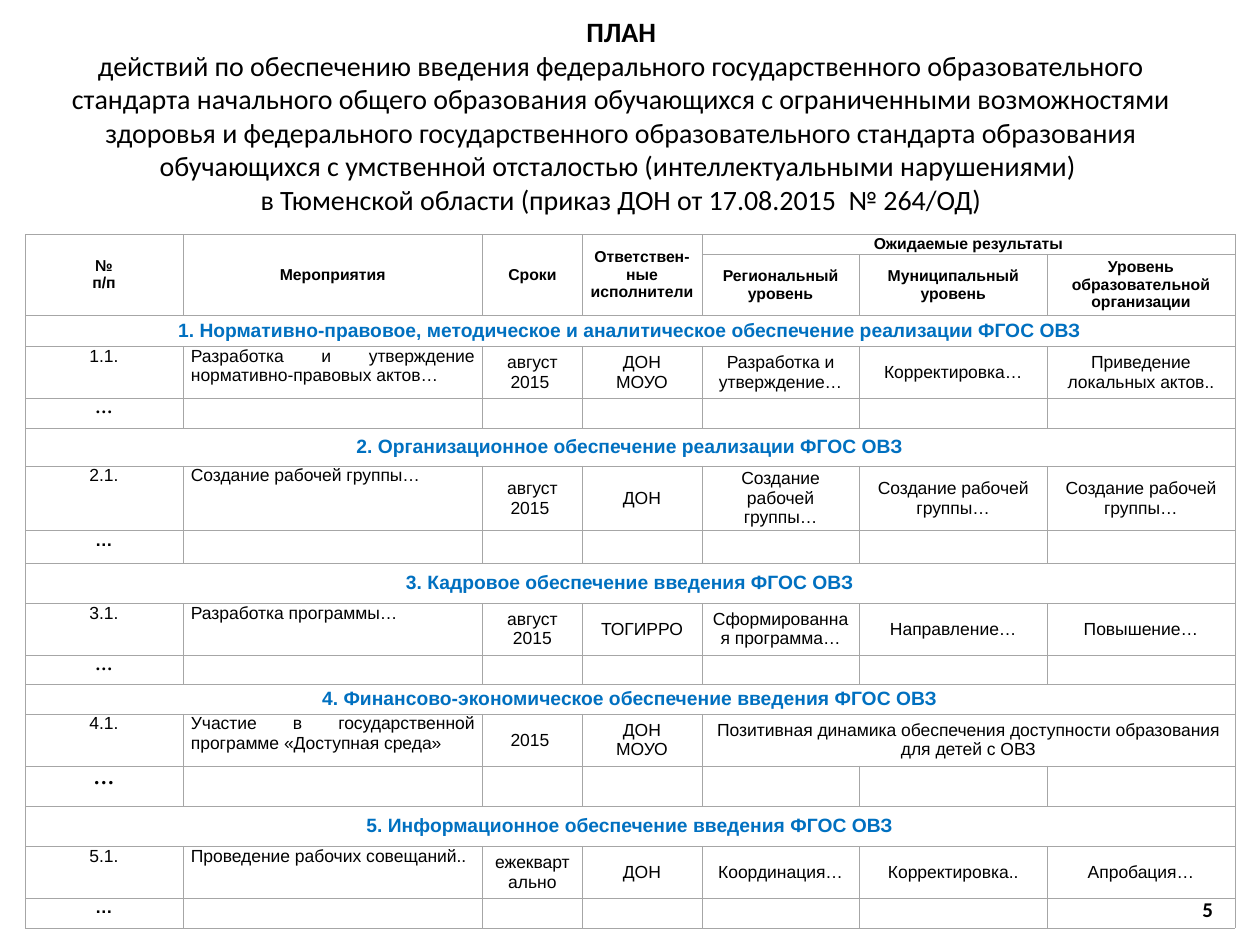
from lxml.etree import SubElement
from pptx import Presentation
from pptx.dml.color import RGBColor
from pptx.enum.text import MSO_ANCHOR as Anchor, PP_ALIGN as Align
from pptx.oxml.ns import qn
from pptx.util import Inches, Pt

COLORS = {"text": "000000", "section": "0070C0", "border": "A6A6A6"}
COLUMN_WIDTHS = [1.25, 2.38, 0.79, 0.95, 1.25, 1.49, 1.49]
HEADER_HEIGHTS = [0.16, 0.48]
LAST = len(COLUMN_WIDTHS) - 1
RESULTS = 4  # first of the three result columns

HEADERS = ["№\nп/п", "Мероприятия", "Сроки", "Ответствен-ные исполнители"]
LEVELS = ["Региональный уровень", "Муниципальный уровень",
          "Уровень образовательной организации"]

# Section title, activity cells, heights of its three rows,
# font and size of the closing ellipsis
SECTIONS = [
    ("1. Нормативно-правовое, методическое и аналитическое обеспечение реализации ФГОС ОВЗ",
     ["1.1.", "Разработка и утверждение нормативно-правовых актов…", "август 2015 ",
      "ДОН\nМОУО", "Разработка и утверждение…", "Корректировка…",
      "Приведение локальных актов.."],
     [0.25, 0.41, 0.24], "Times New Roman", 10),
    ("2. Организационное обеспечение реализации ФГОС ОВЗ",
     ["2.1.", "Создание рабочей группы…", "август 2015 ", "ДОН"]
     + ["Создание рабочей группы…"] * 3,
     [0.3, 0.51, 0.26], "Arial", 10),
    ("3. Кадровое обеспечение введения ФГОС ОВЗ",
     ["3.1.", "Разработка программы…", "август 2015", "ТОГИРРО",
      "Сформированная программа…", "Направление…", "Повышение…"],
     [0.32, 0.41, 0.23], "Times New Roman", 10),
    ("4. Финансово-экономическое обеспечение введения ФГОС ОВЗ",
     ["4.1.", "Участие в государственной программе «Доступная среда» ", "2015 ",
      "ДОН\nМОУО", "Позитивная динамика обеспечения доступности образования для детей с ОВЗ"],
     [0.24, 0.41, 0.32], "Times New Roman", 12),
    ("5. Информационное обеспечение введения ФГОС ОВЗ",
     ["5.1.", "Проведение рабочих совещаний..", "ежеквартально", "ДОН",
      "Координация…", "Корректировка..", "Апробация…"],
     [0.32, 0.41, 0.24], "Arial", 10),
]


def style_font(font, size, name="Arial", color="text", bold=False):
    font.size, font.name, font.bold = Pt(size), name, bold
    font.color.rgb = RGBColor.from_string(COLORS[color])


def add_text_box(slide, left, top, width, height):
    """Add a wrapped, vertically centred box and return its paragraph."""
    shape = slide.shapes.add_textbox(*map(Inches, (left, top, width, height)))
    frame = shape.text_frame
    frame.word_wrap = True
    frame.vertical_anchor = Anchor.MIDDLE
    paragraph = frame.paragraphs[0]
    paragraph.alignment = Align.CENTER
    return paragraph


def add_title(slide):
    paragraph = add_text_box(slide, 0.43, 0.13, 9, 1.57)
    style_font(paragraph.font, 16, "Calibri")
    heading = paragraph.add_run()
    heading.text = "ПЛАН"
    heading.font.bold = True
    for line in (
        "действий по обеспечению введения федерального государственного образовательного "
        "стандарта начального общего образования обучающихся с ограниченными возможностями "
        "здоровья и федерального государственного образовательного стандарта образования "
        "обучающихся с умственной отсталостью (интеллектуальными нарушениями) ",
        "в Тюменской области (приказ ДОН от 17.08.2015  № 264/ОД)",
    ):
        paragraph.add_line_break()
        paragraph.add_run().text = line


def add_page_number(slide):
    paragraph = add_text_box(slide, 9.41, 7.02, 0.35, 0.39)
    paragraph.text = "5"
    style_font(paragraph.font, 12, "Calibri", bold=True)


def prepare_cell(cell):
    """Give a cell thin borders, no fill, narrow margins and small text."""
    properties = cell._tc.get_or_add_tcPr()
    for side in ("a:lnL", "a:lnR", "a:lnT", "a:lnB"):
        line = SubElement(properties, qn(side), w=str(Pt(0.25)))
        fill = SubElement(line, qn("a:solidFill"))
        SubElement(fill, qn("a:srgbClr"), val=COLORS["border"])
    cell.fill.background()
    cell.margin_left = cell.margin_right = Inches(0.065)
    cell.margin_top = cell.margin_bottom = 0
    # Keeps empty cells from stretching their row
    SubElement(cell.text_frame.paragraphs[0]._p, qn("a:endParaRPr"), sz="1000")


def write_cell(cell, text, size=10, align=Align.CENTER, anchor=Anchor.MIDDLE, **font):
    cell.text = text
    cell.vertical_anchor = anchor
    for paragraph in cell.text_frame.paragraphs:
        paragraph.alignment = align
        style_font(paragraph.font, size, **font)


def write_headers(table):
    for column, text in enumerate(HEADERS):
        table.cell(0, column).merge(table.cell(1, column))
        write_cell(table.cell(0, column), text, 9, bold=True)
    table.cell(0, RESULTS).merge(table.cell(0, LAST))
    write_cell(table.cell(0, RESULTS), "Ожидаемые результаты", 9, bold=True)
    for column, text in enumerate(LEVELS, RESULTS):
        write_cell(table.cell(1, column), text, 9, bold=True)


def write_section(table, row, title, activity, ellipsis_font, ellipsis_size):
    # Title across the table
    table.cell(row, 0).merge(table.cell(row, LAST))
    write_cell(table.cell(row, 0), title, 11, color="section", bold=True)
    # Activity: number and name at the top, the rest centred
    if len(activity) == RESULTS + 1:
        table.cell(row + 1, RESULTS).merge(table.cell(row + 1, LAST))
    for column, text in enumerate(activity):
        write_cell(table.cell(row + 1, column), text,
                   align=Align.JUSTIFY if column == 1 else Align.CENTER,
                   anchor=Anchor.TOP if column < 2 else Anchor.MIDDLE)
    # Row left open
    write_cell(table.cell(row + 2, 0), "…", ellipsis_size, anchor=Anchor.TOP,
               name=ellipsis_font, bold=True)


def add_plan_table(slide):
    heights = HEADER_HEIGHTS + [height for section in SECTIONS for height in section[2]]
    frame = slide.shapes.add_table(
        len(heights), len(COLUMN_WIDTHS), Inches(0.2), Inches(1.86),
        Inches(sum(COLUMN_WIDTHS)), Inches(sum(heights)))
    table = frame.table
    table.first_row = table.horz_banding = False
    for column, width in zip(table.columns, COLUMN_WIDTHS):
        column.width = Inches(width)
    for row, height in zip(table.rows, heights):
        row.height = Inches(height)
    for cell in table.iter_cells():
        prepare_cell(cell)
    write_headers(table)
    for index, (title, activity, _, font, size) in enumerate(SECTIONS):
        write_section(table, len(HEADER_HEIGHTS) + 3 * index, title, activity, font, size)


def main():
    presentation = Presentation()
    presentation.slide_width, presentation.slide_height = Inches(10), Inches(7.5)
    slide = presentation.slides.add_slide(presentation.slide_layouts[6])
    add_title(slide)
    add_plan_table(slide)
    add_page_number(slide)
    presentation.save("out.pptx")


if __name__ == "__main__":
    main()
